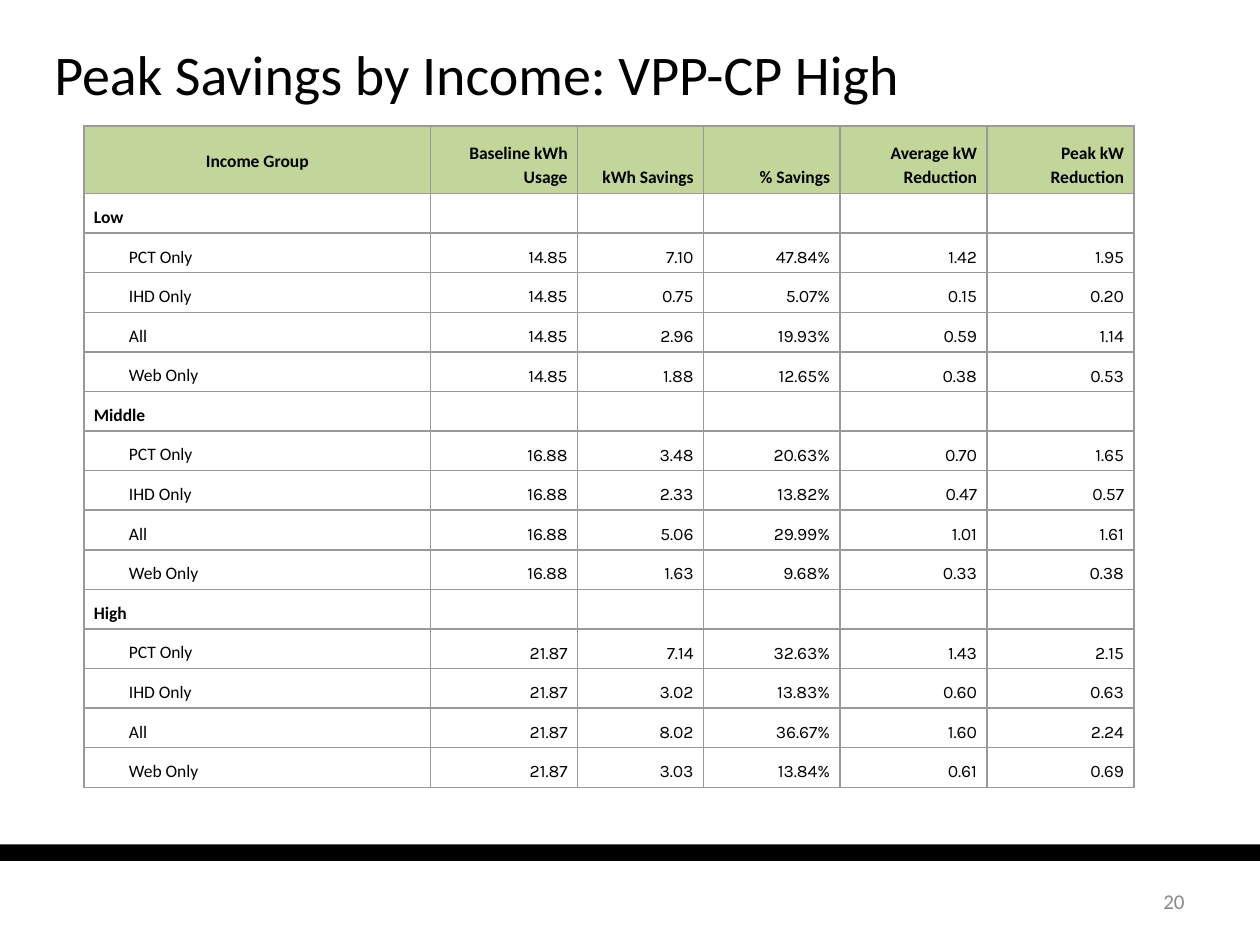
from dataclasses import dataclass

from lxml import etree
from pptx import Presentation
from pptx.dml.color import RGBColor
from pptx.enum.shapes import MSO_SHAPE
from pptx.enum.text import MSO_ANCHOR, MSO_AUTO_SIZE, PP_ALIGN
from pptx.oxml.ns import qn
from pptx.util import Pt

LEFT, CENTER, RIGHT = PP_ALIGN.LEFT, PP_ALIGN.CENTER, PP_ALIGN.RIGHT
MIDDLE, BOTTOM = MSO_ANCHOR.MIDDLE, MSO_ANCHOR.BOTTOM
RECTANGLE = MSO_SHAPE.RECTANGLE
NO_AUTOFIT = MSO_AUTO_SIZE.NONE
TITLE_ONLY = 5


@dataclass(frozen=True)
class Theme:
    text: str = "000000"
    muted: str = "898989"
    header_fill: str = "C2D69B"
    border: str = "999999"
    font: str = "Calibri"
    number_font: str = "Karla"
    title_size: int = 32
    page_size: int = 12
    table_size: int = 10


THEME = Theme()

COLUMN_WIDTHS = [198, 84, 72, 78, 84, 84]
HEADER_HEIGHT, ROW_HEIGHT = 38.6, 22.63
CELL_INSET_X, CELL_INSET_Y = 5.7, 2.86
ITEM_INDENT = 20

HEADERS = ["Income Group", "Baseline kWh Usage", "kWh Savings", "% Savings",
           "Average kW Reduction", "Peak kW Reduction"]
DEVICES = ["PCT Only", "IHD Only", "All", "Web Only"]
# Income group: baseline usage, then one row of results per device
GROUPS = {
    "Low": ("14.85", [("7.10", "47.84%", "1.42", "1.95"),
                      ("0.75", "5.07%", "0.15", "0.20"),
                      ("2.96", "19.93%", "0.59", "1.14"),
                      ("1.88", "12.65%", "0.38", "0.53")]),
    "Middle": ("16.88", [("3.48", "20.63%", "0.70", "1.65"),
                         ("2.33", "13.82%", "0.47", "0.57"),
                         ("5.06", "29.99%", "1.01", "1.61"),
                         ("1.63", "9.68%", "0.33", "0.38")]),
    "High": ("21.87", [("7.14", "32.63%", "1.43", "2.15"),
                       ("3.02", "13.83%", "0.60", "0.63"),
                       ("8.02", "36.67%", "1.60", "2.24"),
                       ("3.03", "13.84%", "0.61", "0.69")]),
}


def style_paragraph(p, size, color=THEME.text, name=THEME.font, bold=False, align=LEFT):
    p.alignment = align
    font = p.font
    font.size, font.name, font.bold = Pt(size), name, bold
    font.color.rgb = RGBColor.from_string(color)


def add_title(slide, text):
    title = slide.shapes.title
    title.left, title.top, title.width, title.height = Pt(31), Pt(12), Pt(575), Pt(60)
    tf = title.text_frame
    tf.text = text
    tf.auto_size, tf.vertical_anchor = NO_AUTOFIT, MIDDLE
    tf.margin_left = tf.margin_right = tf.margin_top = tf.margin_bottom = 0
    style_paragraph(tf.paragraphs[0], THEME.title_size)


def add_footer_bar(slide):
    bar = slide.shapes.add_shape(RECTANGLE, Pt(-2), Pt(482.5), Pt(723), Pt(9.5))
    bar.shadow.inherit = False
    bar.fill.solid()
    bar.fill.fore_color.rgb = RGBColor.from_string(THEME.text)
    bar.line.fill.background()


def add_page_number(slide, number):
    tf = slide.shapes.add_textbox(Pt(516), Pt(500.5), Pt(168), Pt(28.75)).text_frame
    tf.word_wrap, tf.vertical_anchor = True, MIDDLE
    tf.text = number
    style_paragraph(tf.paragraphs[0], THEME.page_size, THEME.muted, align=RIGHT)


def set_borders(cell):
    """Draw all four cell edges; edges must come before the fill in the XML."""
    tcPr = cell._tc.get_or_add_tcPr()
    for i, edge in enumerate(("a:lnL", "a:lnR", "a:lnT", "a:lnB")):
        ln = etree.Element(qn(edge), w=str(Pt(1)))
        fill = etree.SubElement(ln, qn("a:solidFill"))
        etree.SubElement(fill, qn("a:srgbClr"), val=THEME.border)
        tcPr.insert(i, ln)


def fill_cell(cell, text, anchor=BOTTOM, fill=None, indent=0, **style):
    cell.margin_left = cell.margin_right = Pt(CELL_INSET_X)
    cell.margin_top = cell.margin_bottom = Pt(CELL_INSET_Y)
    cell.vertical_anchor = anchor
    if fill:
        cell.fill.solid()
        cell.fill.fore_color.rgb = RGBColor.from_string(fill)
    else:
        cell.fill.background()
    set_borders(cell)
    p = cell.text_frame.paragraphs[0]
    if text:
        p.text = text
    else:
        # Keeps an empty cell from growing to the default type size
        etree.SubElement(p._p, qn("a:endParaRPr"), sz=str(THEME.table_size * 100))
    if indent:
        p._p.get_or_add_pPr().set("marL", str(Pt(indent)))
    p.line_spacing = 1.15
    style_paragraph(p, THEME.table_size, **style)


def fill_header(cells):
    for i, (cell, text) in enumerate(zip(cells, HEADERS)):
        fill_cell(cell, text, MIDDLE if i == 0 else BOTTOM, THEME.header_fill,
                  bold=True, align=CENTER if i == 0 else RIGHT)
    cells[0].text_frame.paragraphs[0].space_after = Pt(2)


def fill_group_row(cells, name):
    fill_cell(cells[0], name, bold=True)
    for cell in cells[1:]:
        fill_cell(cell, "")


def fill_device_row(cells, device, values):
    fill_cell(cells[0], device, indent=ITEM_INDENT)
    for cell, value in zip(cells[1:], values):
        fill_cell(cell, value, name=THEME.number_font, align=RIGHT)


def add_savings_table(slide):
    row_count = 1 + len(GROUPS) * (1 + len(DEVICES))
    height = HEADER_HEIGHT + (row_count - 1) * ROW_HEIGHT
    table = slide.shapes.add_table(row_count, len(HEADERS), Pt(48), Pt(72),
                                   Pt(sum(COLUMN_WIDTHS)), Pt(height)).table
    table.first_row = table.horz_banding = False
    for column, width in zip(table.columns, COLUMN_WIDTHS):
        column.width = Pt(width)
    for i, row in enumerate(table.rows):
        row.height = Pt(ROW_HEIGHT if i else HEADER_HEIGHT)

    rows = (list(row.cells) for row in table.rows)
    fill_header(next(rows))
    for name, (baseline, results) in GROUPS.items():
        fill_group_row(next(rows), name)
        for device, values in zip(DEVICES, results):
            fill_device_row(next(rows), device, (baseline, *values))


def main():
    prs = Presentation()
    prs.slide_width, prs.slide_height = Pt(720), Pt(540)
    slide = prs.slides.add_slide(prs.slide_layouts[TITLE_ONLY])
    add_footer_bar(slide)
    add_page_number(slide, "20")
    add_savings_table(slide)
    add_title(slide, "Peak Savings by Income: VPP-CP High")
    prs.save("out.pptx")


if __name__ == "__main__":
    main()
